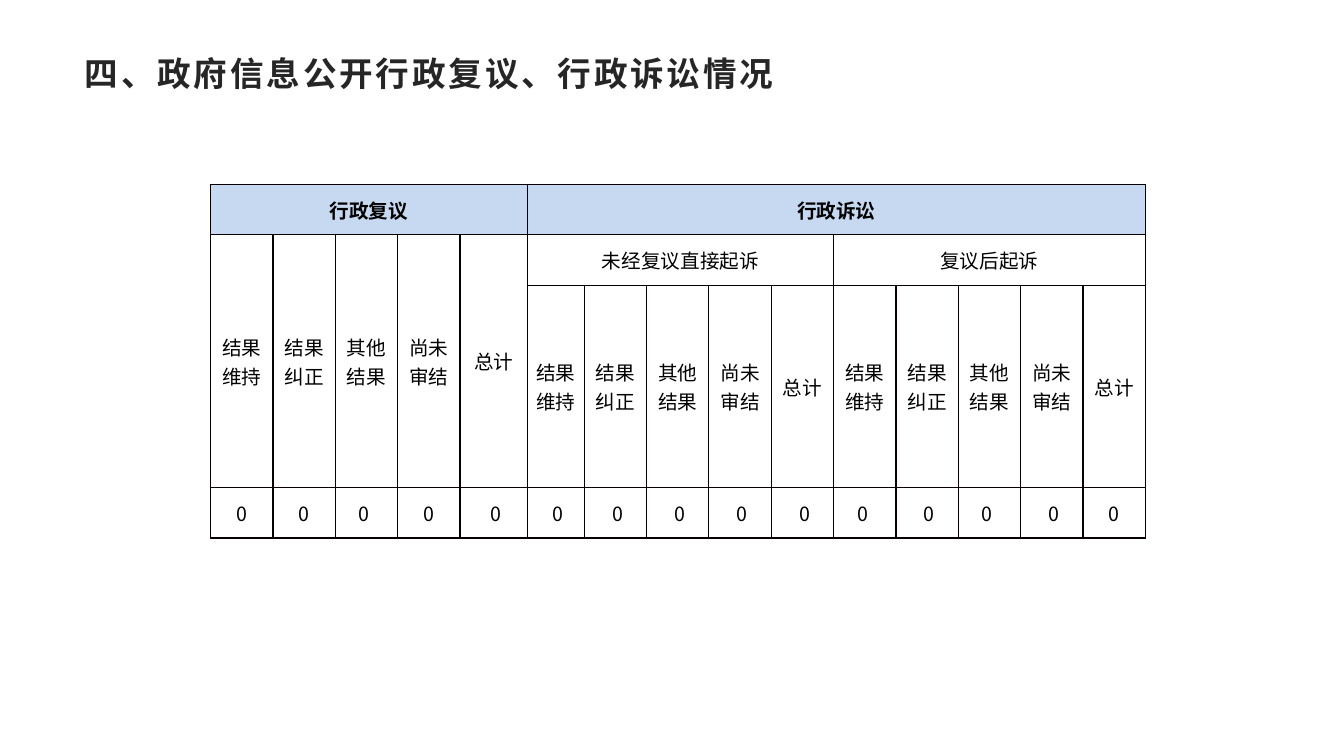
from dataclasses import dataclass

from lxml.etree import SubElement
from pptx import Presentation
from pptx.dml.color import RGBColor
from pptx.enum.text import MSO_ANCHOR, MSO_AUTO_SIZE, PP_ALIGN
from pptx.oxml.ns import qn
from pptx.util import Pt


@dataclass(frozen=True)
class Theme:
    title_ink: str = "262626"
    ink: str = "000000"
    border: str = "080000"
    header_fill: str = "C6D9F1"
    title_size: float = 24
    cell_size: float = 14
    title_font: str = "Arial"
    label_font: str = "Times New Roman"
    chinese_font: str = "Noto Sans CJK SC"


THEME = Theme()
OUTCOMES = ["结果\n维持", "结果\n纠正", "其他\n结果", "尚未\n审结", "总计"]
COUNTS = ["0", "0", "0 ", "0", " 0", " 0", " 0", " 0", " 0", " 0",
          "0 ", " 0", "0 ", " 0", "0"]
COLUMN_WIDTHS = [44.55] * 4 + [48.3, 40.5] + [44.55] * 9
ROW_HEIGHTS = [36.1, 36.1, 144.4, 36.1]


def style_paragraph(paragraph, font_name, size, ink, bold, align):
    paragraph.alignment = align
    font = paragraph.font
    font.name, font.size, font.bold = font_name, Pt(size), bold
    font.color.rgb = RGBColor.from_string(ink)
    properties = paragraph._p.get_or_add_pPr().get_or_add_defRPr()
    SubElement(properties, qn("a:ea"), typeface=THEME.chinese_font)
    return properties


def set_title(slide, wording):
    title = slide.shapes.title
    title.left, title.top, title.width, title.height = Pt(52.6), Pt(34.6), Pt(854.6), Pt(34.6)
    frame = title.text_frame
    frame.text = wording
    frame.auto_size = MSO_AUTO_SIZE.NONE
    frame.vertical_anchor = MSO_ANCHOR.MIDDLE
    frame.margin_left, frame.margin_right = Pt(7.9), Pt(5.8)
    frame.margin_top = frame.margin_bottom = Pt(2.9)
    properties = style_paragraph(frame.paragraphs[0], THEME.title_font, THEME.title_size,
                                 THEME.title_ink, True, PP_ALIGN.LEFT)
    properties.set("spc", "200")


def frame_cell(cell):
    properties = cell._tc.get_or_add_tcPr()
    for side in ("lnL", "lnR", "lnT", "lnB"):
        line = SubElement(properties, qn(f"a:{side}"), w=str(Pt(1)))
        fill = SubElement(line, qn("a:solidFill"))
        SubElement(fill, qn("a:srgbClr"), val=THEME.border)
    cell.fill.background()
    cell.vertical_anchor = MSO_ANCHOR.MIDDLE
    cell.margin_left = cell.margin_right = Pt(5)
    cell.margin_top = cell.margin_bottom = Pt(0)


def fill_cell(cell, wording, font_name=THEME.label_font, header=False):
    cell.text_frame.text = wording
    for paragraph in cell.text_frame.paragraphs:
        style_paragraph(paragraph, font_name, THEME.cell_size, THEME.ink, header,
                        PP_ALIGN.CENTER)
    if header:
        cell.fill.solid()
        cell.fill.fore_color.rgb = RGBColor.from_string(THEME.header_fill)


def fill_group(table, row, first, last, wording, header=False):
    table.cell(row, first).merge(table.cell(row, last))
    fill_cell(table.cell(row, first), wording, header=header)


def add_case_table(slide):
    table = slide.shapes.add_table(
        len(ROW_HEIGHTS), len(COLUMN_WIDTHS), Pt(150.4), Pt(131.7),
        Pt(sum(COLUMN_WIDTHS)), Pt(sum(ROW_HEIGHTS))).table
    table.first_row = table.horz_banding = False
    for column, width in zip(table.columns, COLUMN_WIDTHS):
        column.width = Pt(width)
    for row, height in zip(table.rows, ROW_HEIGHTS):
        row.height = Pt(height)
    for cell in table.iter_cells():
        frame_cell(cell)

    fill_group(table, 0, 0, 4, "行政复议", header=True)
    fill_group(table, 0, 5, 14, "行政诉讼", header=True)
    fill_group(table, 1, 5, 9, "未经复议直接起诉")
    fill_group(table, 1, 10, 14, "复议后起诉")

    for column, count in enumerate(COUNTS):
        outcome = OUTCOMES[column % len(OUTCOMES)]
        if column < len(OUTCOMES):
            table.cell(1, column).merge(table.cell(2, column))
            fill_cell(table.cell(1, column), outcome)
        else:
            fill_cell(table.cell(2, column), "结果维持" if column == 5 else outcome)
        fill_cell(table.cell(3, column), count, THEME.chinese_font)


def main():
    presentation = Presentation()
    presentation.slide_width, presentation.slide_height = Pt(960), Pt(540)
    slide = presentation.slides.add_slide(presentation.slide_layouts[5])
    set_title(slide, "四、政府信息公开行政复议、行政诉讼情况")
    add_case_table(slide)
    presentation.save("out.pptx")


if __name__ == "__main__":
    main()
